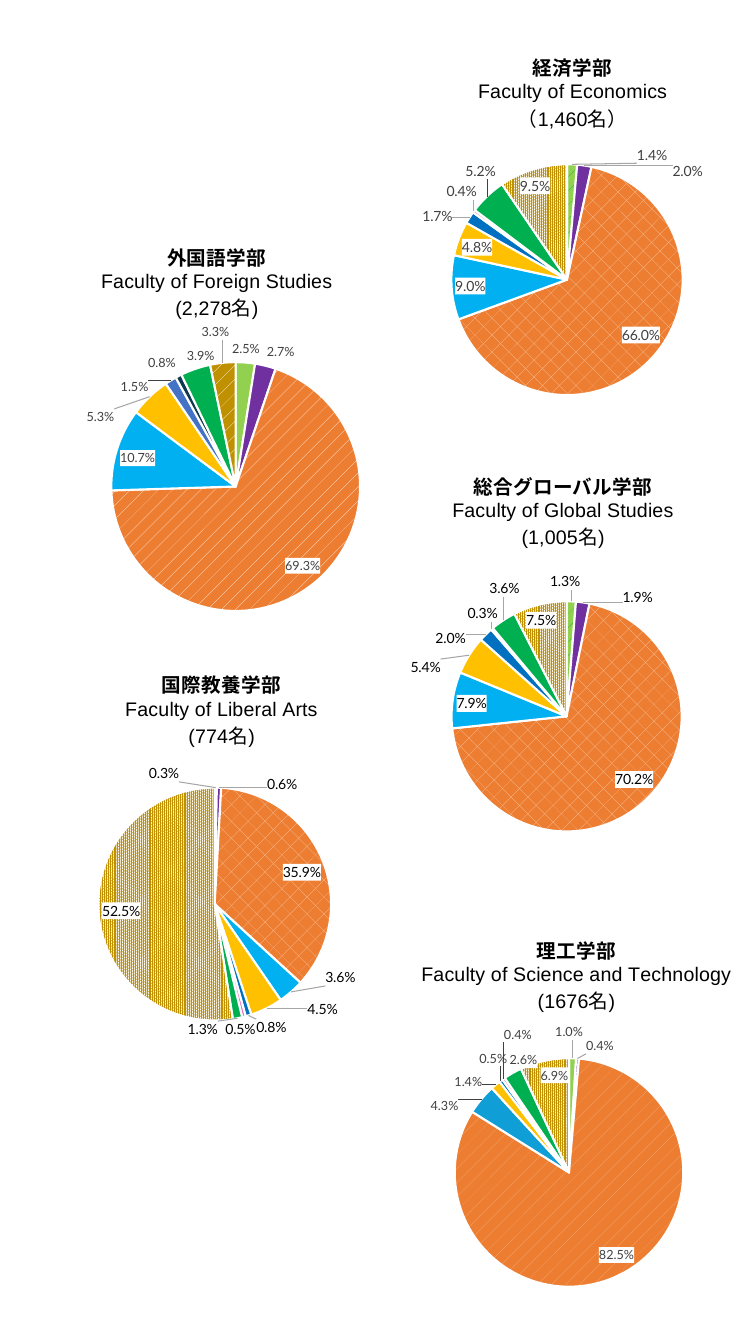
from copy import deepcopy
from math import cos, pi, sin

from pptx import Presentation
from pptx.chart.data import CategoryChartData
from pptx.dml.color import RGBColor
from pptx.enum.chart import XL_CHART_TYPE, XL_LABEL_POSITION
from pptx.enum.dml import MSO_PATTERN
from pptx.oxml import parse_xml
from pptx.oxml.ns import nsdecls, qn
from pptx.util import Cm, Pt

BLACK = RGBColor(0x00, 0x00, 0x00)
GRAY = RGBColor(0x40, 0x40, 0x40)
LEADER_GRAY = RGBColor(0xA6, 0xA6, 0xA6)
WHITE = RGBColor(0xFF, 0xFF, 0xFF)
LIME = RGBColor(0x92, 0xD0, 0x50)
GREEN = RGBColor(0x00, 0xB0, 0x50)
PURPLE = RGBColor(0x70, 0x30, 0xA0)
ORANGE = RGBColor(0xED, 0x7D, 0x31)
PEACH = RGBColor(0xF8, 0xCB, 0xAD)
APRICOT = RGBColor(0xF4, 0xB1, 0x83)
SKY = RGBColor(0x00, 0xB0, 0xF0)
CYAN = RGBColor(0x0F, 0x9E, 0xD5)
YELLOW = RGBColor(0xFF, 0xC0, 0x00)
BLUE = RGBColor(0x00, 0x70, 0xC0)
STEEL = RGBColor(0x44, 0x72, 0xC4)
NAVY = RGBColor(0x0D, 0x3A, 0x4E)
PINK = RGBColor(0xE8, 0x6E, 0xBC)
GOLD = RGBColor(0xBF, 0x90, 0x00)

JAPANESE_FONT = "Noto Sans CJK JP"
DOTS, DIAMONDS, DENSE = MSO_PATTERN.PERCENT_5, MSO_PATTERN.DOTTED_DIAMOND, MSO_PATTERN.PERCENT_90
# A slice is one colour, or (pattern, foreground, background)
SLICE_FILLS = [(DOTS, GREEN, LIME), PURPLE, (DIAMONDS, PEACH, ORANGE), SKY, YELLOW,
               BLUE, PINK, GREEN, (DENSE, GOLD, WHITE)]
LABEL_GAP, LABEL_HALF_WIDTH, LABEL_HALF_HEIGHT = 0.15, 0.39, 0.22

# Frames, title corners, pies (centre, diameter) and label centres are in cm on the slide
FACULTIES = [
    dict(title=["経済学部", "Faculty of Economics", "（1,460名）"],
         frame=(9.96, 0, 9.45, 9.98), corner=(11.97, 1.21), pie=(14.29, 7.07, 5.83),
         shares=[1.4, 2, 66, 9, 4.8, 1.7, 0.4, 5.2, 9.5], size=10, color=GRAY, fills={},
         moved={0: (16.43, 3.91), 1: (17.34, 4.33), 5: (11.01, 5.47), 6: (11.62, 4.84)}),
    dict(title=["総合グローバル学部", "Faculty of Global Studies", "(1,005名)"],
         frame=(9.45, 11.66, 8.92, 10.44), corner=(11.32, 11.74), pie=(14.28, 18.05, 5.8),
         shares=[1.3, 1.9, 70.2, 7.9, 5.4, 2, 0.3, 3.6, 7.5], size=10, color=BLACK, fills={},
         moved={0: (14.24, 14.64), 1: (16.08, 15.04), 4: (10.71, 16.81), 5: (11.34, 16.08),
                6: (12.15, 15.45), 7: (12.7, 14.82)}),
    dict(title=["国際教養学部", "Faculty of Liberal Arts", "(774名)"],
         frame=(0.58, 16.61, 9.96, 11), corner=(3.08, 16.75), pie=(5.41, 22.78, 5.87),
         shares=[0.3, 0.6, 35.9, 3.6, 4.5, 0.8, 0.5, 1.3, 52.5], size=10, color=BLACK, fills={},
         moved={0: (4.13, 19.48), 1: (7.11, 19.76), 3: (8.59, 24.64), 4: (8.14, 25.43),
                5: (6.85, 25.9), 6: (6.07, 25.95), 7: (5.12, 25.95)}),
    dict(title=["理工学部", "Faculty of Science and Technology", "(1676名)"],
         frame=(7.52, 23.16, 13.51, 10.11), corner=(10.54, 23.43), pie=(14.34, 29.54, 5.76),
         shares=[1, 0.4, 82.5, 4.3, 1.4, 0.5, 0.4, 2.6, 6.9], size=9, color=GRAY,
         fills={0: LIME, 2: (DOTS, APRICOT, ORANGE), 3: CYAN},
         moved={0: (14.34, 25.98), 1: (15.12, 26.33), 7: (13.15, 26.69), 8: (13.93, 27.07)}),
    dict(title=["外国語学部", "Faculty of Foreign Studies", "(2,278名)"],
         frame=(-1.47, 5.64, 13.84, 10.11), corner=(2.47, 5.97), pie=(5.94, 12.26, 6.27),
         shares=[2.5, 2.7, 69.3, 10.7, 5.3, 1.5, 0.8, 3.9, 3.3], size=9, color=GRAY,
         fills={0: LIME, 2: (DOTS, WHITE, ORANGE), 5: STEEL, 6: NAVY, 8: (DOTS, WHITE, GOLD)},
         moved={4: (2.49, 10.48), 8: (5.39, 8.34)}),
]


def write(paragraph, text, *, font, size, bold):
    run = paragraph.add_run()
    run.text = text
    run.font.name, run.font.size, run.font.bold = font, Pt(size), bold
    run.font.color.rgb = BLACK
    latin = run.font._element.find(qn("a:latin"))
    latin.addnext(parse_xml(f'<a:ea {nsdecls("a")} typeface="{JAPANESE_FONT}"/>'))


def set_layout(parent, index, **settings):
    """Replace the manual layout of a chart part."""
    for old in parent.findall(qn("c:layout")):
        parent.remove(old)
    fields = "".join(
        f'<c:{key} val="{value if isinstance(value, str) else round(value, 4)}"/>'
        for key, value in settings.items())
    parent.insert(index, parse_xml(
        f'<c:layout {nsdecls("c")}><c:manualLayout>{fields}</c:manualLayout></c:layout>'))


prs = Presentation()
prs.slide_width, prs.slide_height = Cm(19.05), Cm(33.86)
slide = prs.slides.add_slide(prs.slide_layouts[6])

for faculty in FACULTIES:
    left, top, width, height = faculty["frame"]
    shares = faculty["shares"]
    chart_data = CategoryChartData(number_format="0.0")
    chart_data.categories = [str(n) for n in range(1, 10)]
    chart_data.add_series("Series 1", shares)
    chart = slide.shapes.add_chart(XL_CHART_TYPE.PIE, Cm(left), Cm(top), Cm(width),
                                   Cm(height), chart_data).chart
    chart.has_legend = False
    chart.font.name, chart.font.size = "Lato", Pt(10)
    chart.font.color.rgb = BLACK
    chart_xml = chart.element.find(qn("c:chart"))
    chart_xml.addnext(parse_xml(
        f'<c:spPr {nsdecls("c", "a")}><a:noFill/><a:ln><a:noFill/></a:ln></c:spPr>'))

    chart.has_title = True
    heading = chart.chart_title.text_frame
    for row, line in enumerate(faculty["title"]):
        paragraph = heading.add_paragraph() if row else heading.paragraphs[0]
        write(paragraph, line, font="Arial" if row else JAPANESE_FONT, size=14, bold=row == 0)
    corner_x, corner_y = faculty["corner"]
    set_layout(chart_xml.find(qn("c:title")), 1, xMode="edge", yMode="edge",
               x=(corner_x - left) / width, y=(corner_y - top) / height)
    center_x, center_y, diameter = faculty["pie"]
    radius = diameter / 2
    set_layout(chart_xml.find(qn("c:plotArea")), 0, layoutTarget="inner", xMode="edge",
               yMode="edge", x=(center_x - radius - left) / width,
               y=(center_y - radius - top) / height, w=diameter / width, h=diameter / height)

    pie = chart.plots[0]
    pie.vary_by_categories = True
    series = pie.series[0]
    for i, default_fill in enumerate(SLICE_FILLS):
        look = series.points[i].format
        slice_fill = faculty["fills"].get(i, default_fill)
        if isinstance(slice_fill, RGBColor):
            look.fill.solid()
            look.fill.fore_color.rgb = slice_fill
        else:
            look.fill.patterned()
            look.fill.pattern, look.fill.fore_color.rgb, look.fill.back_color.rgb = slice_fill
        look.line.color.rgb = WHITE
        look.line.width = Pt(1.5)

    labels = series.data_labels
    labels.show_percentage, labels.show_value = True, False
    labels.number_format, labels.number_format_is_linked = "0.0%", False
    labels.position = XL_LABEL_POSITION.BEST_FIT
    labels.font.name, labels.font.size = "Lato", Pt(faculty["size"])
    labels.font.color.rgb = faculty["color"]
    labels_xml = chart.element.xpath(".//c:ser/c:dLbls")[0]
    labels_xml.find(qn("c:numFmt")).addnext(parse_xml(
        f'<c:spPr {nsdecls("c", "a")}><a:solidFill><a:srgbClr val="{WHITE}"/></a:solidFill>'
        '</c:spPr>'))
    leader_switch = labels_xml.find(qn("c:showLeaderLines"))
    shared_format = [part for part in labels_xml if part is not leader_switch]
    leader_switch.addnext(parse_xml(
        f'<c:leaderLines {nsdecls("c", "a")}><c:spPr><a:ln w="9525"><a:solidFill>'
        f'<a:srgbClr val="{LEADER_GRAY}"/></a:solidFill></a:ln></c:spPr></c:leaderLines>'))

    order = 0
    for i, share in enumerate(shares):
        # Rounded shares may not add up to 100; such a label shows its value instead
        off_total = round(100 * share / sum(shares), 1) != share
        if i not in faculty["moved"] and not off_total:
            continue
        label = parse_xml(f'<c:dLbl {nsdecls("c")}><c:idx val="{i}"/></c:dLbl>')
        label.extend(deepcopy(part) for part in shared_format)
        if off_total:
            label.find(qn("c:numFmt")).set("formatCode", '0.0"%"')
            label.find(qn("c:showVal")).set("val", "1")
            label.find(qn("c:showPercent")).set("val", "0")
        if i in faculty["moved"]:
            # The layout holds the offset from the natural place outside the rim
            label_x, label_y = faculty["moved"][i]
            angle = 2 * pi * (sum(shares[:i]) + share / 2) / sum(shares)
            across, down = sin(angle), -cos(angle)
            side_x, side_y = [0 if abs(part) < 0.09 else 1 if part > 0 else -1
                              for part in (across, down)]
            natural_x = center_x + (radius + LABEL_GAP) * across + LABEL_HALF_WIDTH * side_x
            natural_y = center_y + (radius + LABEL_GAP) * down + LABEL_HALF_HEIGHT * side_y
            set_layout(label, 1, x=(label_x - natural_x) / width,
                       y=(label_y - natural_y) / height)
        labels_xml.insert(order, label)
        order += 1

prs.save("out.pptx")
